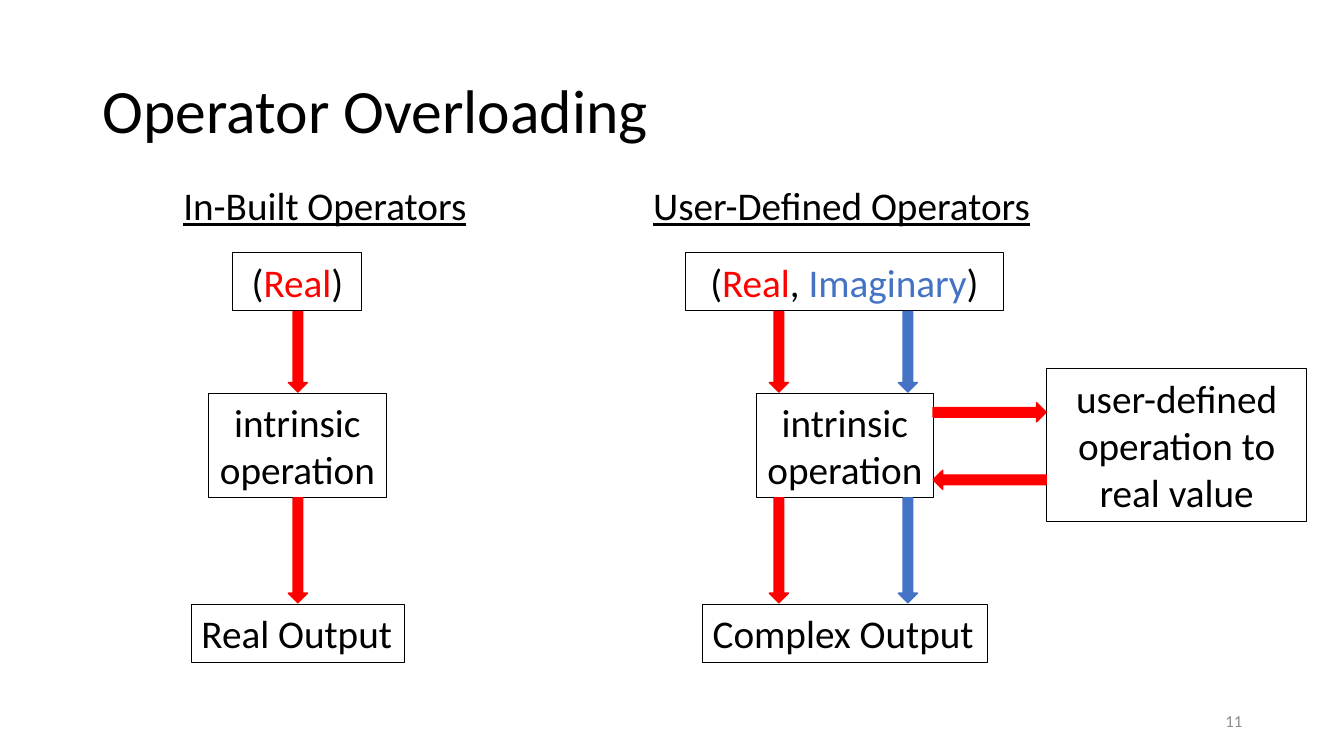
from dataclasses import dataclass

from pptx import Presentation
from pptx.dml.color import RGBColor
from pptx.enum.shapes import MSO_SHAPE
from pptx.enum.text import MSO_ANCHOR, MSO_AUTO_SIZE, PP_ALIGN
from pptx.util import Inches, Pt


@dataclass(frozen=True)
class Theme:
    font: str = "Calibri"
    black: str = "000000"
    red: str = "FF0000"
    blue: str = "4472C4"
    gray: str = "8C8C8C"
    title: int = 44
    body: int = 28
    small: int = 12
    border: float = 0.75
    edge: float = 1


class Board:
    def __init__(self, deck, theme):
        self.theme = theme
        self.slide = deck.slides.add_slide(deck.slide_layouts[6])

    def fill_text(self, frame, lines, size, align, **extra):
        """Each line is a list of (text, colour) runs."""
        for i, line in enumerate(lines):
            para = frame.paragraphs[0] if i == 0 else frame.add_paragraph()
            para.alignment = align
            for text, color in line:
                run = para.add_run()
                run.text = text
                run.font.color.rgb = RGBColor.from_string(color)
                style = {"name": self.theme.font, "size": Pt(size), **extra}
                for key, value in style.items():
                    setattr(run.font, key, value)

    def label(self, area, text, size, color, align=PP_ALIGN.LEFT,
              anchor=MSO_ANCHOR.TOP, wrap=True, **extra):
        box = self.slide.shapes.add_textbox(*map(Inches, area))
        frame = box.text_frame
        style = {"word_wrap": wrap, "vertical_anchor": anchor}
        for key, value in style.items():
            setattr(frame, key, value)
        self.fill_text(frame, [[(text, color)]], size, align, **extra)
        return frame

    def box(self, area, lines, align=PP_ALIGN.CENTER, wrap=True):
        shape = self.slide.shapes.add_shape(
            MSO_SHAPE.RECTANGLE, *map(Inches, area))
        shape.shadow.inherit = False
        shape.fill.background()
        shape.line.color.rgb = RGBColor.from_string(self.theme.black)
        shape.line.width = Pt(self.theme.border)
        style = {"word_wrap": wrap, "vertical_anchor": MSO_ANCHOR.TOP,
                 "auto_size": MSO_AUTO_SIZE.SHAPE_TO_FIT_TEXT}
        for key, value in style.items():
            setattr(shape.text_frame, key, value)
        self.fill_text(shape.text_frame, lines, self.theme.body, align)

    def arrow(self, left, top, length, color, turn=0):
        shape = self.slide.shapes.add_shape(
            MSO_SHAPE.DOWN_ARROW, *map(Inches, (left, top, 0.19, length)))
        shape.shadow.inherit = False
        shape.rotation = turn
        shape.fill.solid()
        for part in (shape.fill.fore_color, shape.line.color):
            part.rgb = RGBColor.from_string(color)
        shape.line.width = Pt(self.theme.edge)


def main():
    deck = Presentation()
    deck.slide_width, deck.slide_height = Inches(13.33), Inches(7.5)
    theme = Theme()
    board = Board(deck, theme)
    black, red, blue = theme.black, theme.red, theme.blue

    # Title and page number
    title = board.label((0.92, 0.4, 11.5, 1.45), "Operator Overloading",
                        theme.title, black, anchor=MSO_ANCHOR.MIDDLE)
    title.paragraphs[0].line_spacing = 0.9
    board.label((9.42, 6.95, 3, 0.4), "11", theme.small, theme.gray,
                PP_ALIGN.RIGHT, MSO_ANCHOR.MIDDLE)

    # Column headings
    for left, width, text, wrap in (
            (1.72, 3.03, "In-Built Operators", True),
            (6.38, 3.99, "User-Defined Operators", False)):
        board.label((left, 1.75, width, 0.57), text, theme.body, black,
                    wrap=wrap, underline=True)

    # Inputs
    real = [("(", black), ("Real", red)]
    close = (")", black)
    board.box((2.31, 2.51, 1.28, 0.57), [real + [close]])
    board.box((6.8, 2.51, 3.15, 0.57),
              [real + [(", ", black), ("Imaginary", blue), close]])

    # Intrinsic operations
    steps = [[("intrinsic", black)], [("operation", black)]]
    for left in (2.07, 7.5):
        board.box((left, 3.9, 1.76, 1.04), steps, wrap=False)

    # Outputs
    for left, width, text in ((1.9, 2.11, "Real Output"),
                              (6.97, 2.82, "Complex Output")):
        board.box((left, 6, width, 0.57), [[(text, black)]],
                  PP_ALIGN.LEFT, wrap=False)

    # User-defined operation
    board.box((10.38, 3.66, 2.58, 1.51),
              [[("user-defined operation to real value", black)]])

    # Downward flow
    for left, color in ((2.86, red), (7.63, red), (8.91, blue)):
        for top, length in ((3.09, 0.8), (4.94, 1.04)):
            board.arrow(left, top, length, color)

    # Exchange with the user-defined operation
    for top, turn in ((3.53, 270), (4.2, 90)):
        board.arrow(9.72, top, 1.12, red, turn)

    deck.save("out.pptx")


if __name__ == "__main__":
    main()
